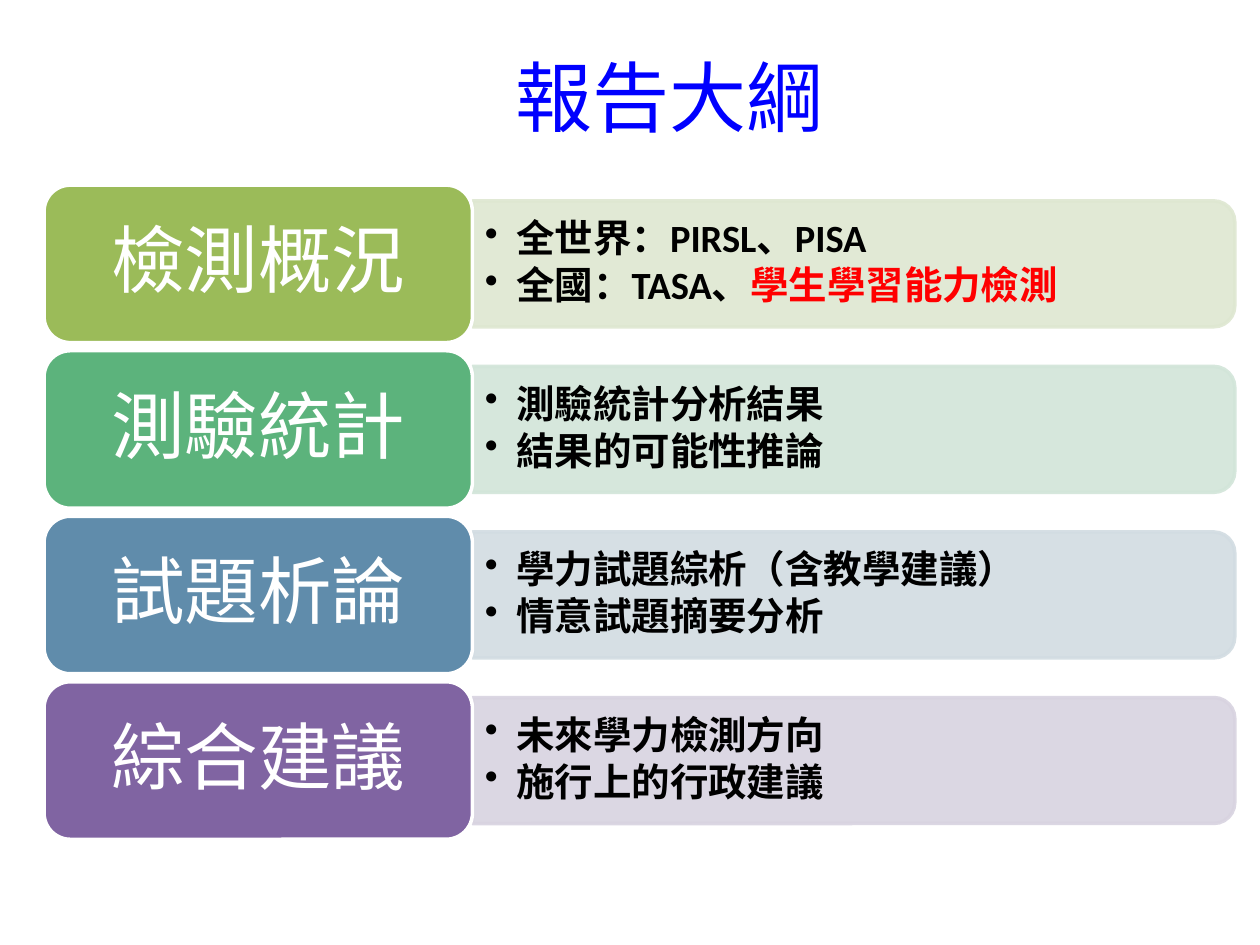
from dataclasses import dataclass

from lxml.etree import SubElement
from pptx import Presentation
from pptx.dml.color import RGBColor as RGB
from pptx.enum.shapes import MSO_SHAPE as SHAPE
from pptx.enum.text import MSO_ANCHOR as ANCHOR, PP_ALIGN as ALIGN
from pptx.oxml.ns import qn
from pptx.util import Pt


@dataclass(frozen=True)
class Theme:
    title: RGB = RGB(0x00, 0x00, 0xFF)
    text: RGB = RGB(0x00, 0x00, 0x00)
    accent: RGB = RGB(0xFF, 0x00, 0x00)
    white: RGB = RGB(0xFF, 0xFF, 0xFF)
    title_size: Pt = Pt(44)
    label_size: Pt = Pt(42)
    list_size: Pt = Pt(22)
    font: str = "Calibri"
    label_font: str = "Noto Sans CJK SC"


theme = Theme()

# Each section: label, label colour, panel colour, list items made of (text, colour) runs
sections = [
    ("檢測概況", "9BBB59", "DEE7D1",
     [[("全世界：PIRSL、PISA", theme.text)],
      [("全國：TASA、", theme.text), ("學生學習能力檢測", theme.accent)]]),
    ("測驗統計", "5CB37C", "D2E5D9",
     [[("測驗統計分析結果", theme.text)], [("結果的可能性推論", theme.text)]]),
    ("試題析論", "608CAB", "D2DCE2",
     [[("學力試題綜析（含教學建議）", theme.text)], [("情意試題摘要分析", theme.text)]]),
    ("綜合建議", "8064A2", "D8D3E0",
     [[("未來學力檢測方向", theme.text)], [("施行上的行政建議", theme.text)]]),
]


def add_block(kind, left, top, width, height, fill, line):
    shape = slide.shapes.add_shape(kind, Pt(left), Pt(top), Pt(width), Pt(height))
    shape.shadow.inherit = False
    shape.fill.solid()
    shape.fill.fore_color.rgb = fill
    shape.line.color.rgb = line
    shape.line.width = Pt(2)
    return shape


def add_bullet(paragraph):
    properties = paragraph._p.get_or_add_pPr()
    properties.set("marL", str(Pt(18)))
    properties.set("indent", str(-Pt(18)))
    SubElement(properties, qn("a:buChar")).set("char", "•")


presentation = Presentation()
presentation.slide_width, presentation.slide_height = Pt(720), Pt(540)
slide = presentation.slides.add_slide(presentation.slide_layouts[5])

# Title
title = slide.shapes.title
title.left, title.top, title.width, title.height = Pt(87.8), Pt(9.4), Pt(589.7), Pt(90)
title.text_frame.vertical_anchor = ANCHOR.MIDDLE
paragraph = title.text_frame.paragraphs[0]
paragraph.text = "報告大綱"
paragraph.alignment = ALIGN.CENTER
paragraph.font.name = theme.font
paragraph.font.size = theme.title_size
paragraph.font.color.rgb = theme.title

# Rows: a label block with a panel to its right, centred on the same line
label_left, label_width, label_height = 25.2, 244.8, 90
panel_left, panel_width, panel_height = 270, 435.6, 72
list_height = 64.8
first_centre, row_pitch = 150.8, 94.6

for row, (label, label_colour, panel_colour, items) in enumerate(sections):
    centre = first_centre + row * row_pitch

    # Panel: turned a quarter so that its rounded corners face right
    colour = RGB.from_string(panel_colour)
    panel = add_block(SHAPE.ROUND_2_SAME_RECTANGLE,
                      panel_left + (panel_width - panel_height) / 2,
                      centre - panel_width / 2,
                      panel_height, panel_width, colour, colour)
    panel.rotation = 90
    for colour_element in panel._element.spPr.iter(qn("a:srgbClr")):
        SubElement(colour_element, qn("a:alpha")).set("val", "90000")

    # Bulleted list
    box = slide.shapes.add_textbox(Pt(panel_left + 0.6), Pt(centre - list_height / 2),
                                   Pt(432), Pt(list_height))
    frame = box.text_frame
    frame.word_wrap = True
    frame.vertical_anchor = ANCHOR.MIDDLE
    frame.margin_left = frame.margin_right = Pt(6.5)
    for index, runs in enumerate(items):
        paragraph = frame.add_paragraph() if index else frame.paragraphs[0]
        paragraph.level = 1
        paragraph.line_spacing = 0.9
        paragraph.space_after = Pt(3)
        add_bullet(paragraph)
        paragraph.font.name = theme.font
        paragraph.font.size = theme.list_size
        paragraph.font.bold = True
        for text, run_colour in runs:
            run = paragraph.add_run()
            run.text = text
            run.font.color.rgb = run_colour

    # Label
    block = add_block(SHAPE.ROUNDED_RECTANGLE, label_left, centre - label_height / 2,
                      label_width, label_height, RGB.from_string(label_colour), theme.white)
    frame = block.text_frame
    frame.word_wrap = True
    frame.vertical_anchor = ANCHOR.MIDDLE
    paragraph = frame.paragraphs[0]
    paragraph.text = label
    paragraph.alignment = ALIGN.CENTER
    paragraph.line_spacing = 0.9
    paragraph.font.name = theme.label_font
    paragraph.font.size = theme.label_size
    paragraph.font.color.rgb = theme.white

presentation.save("out.pptx")
